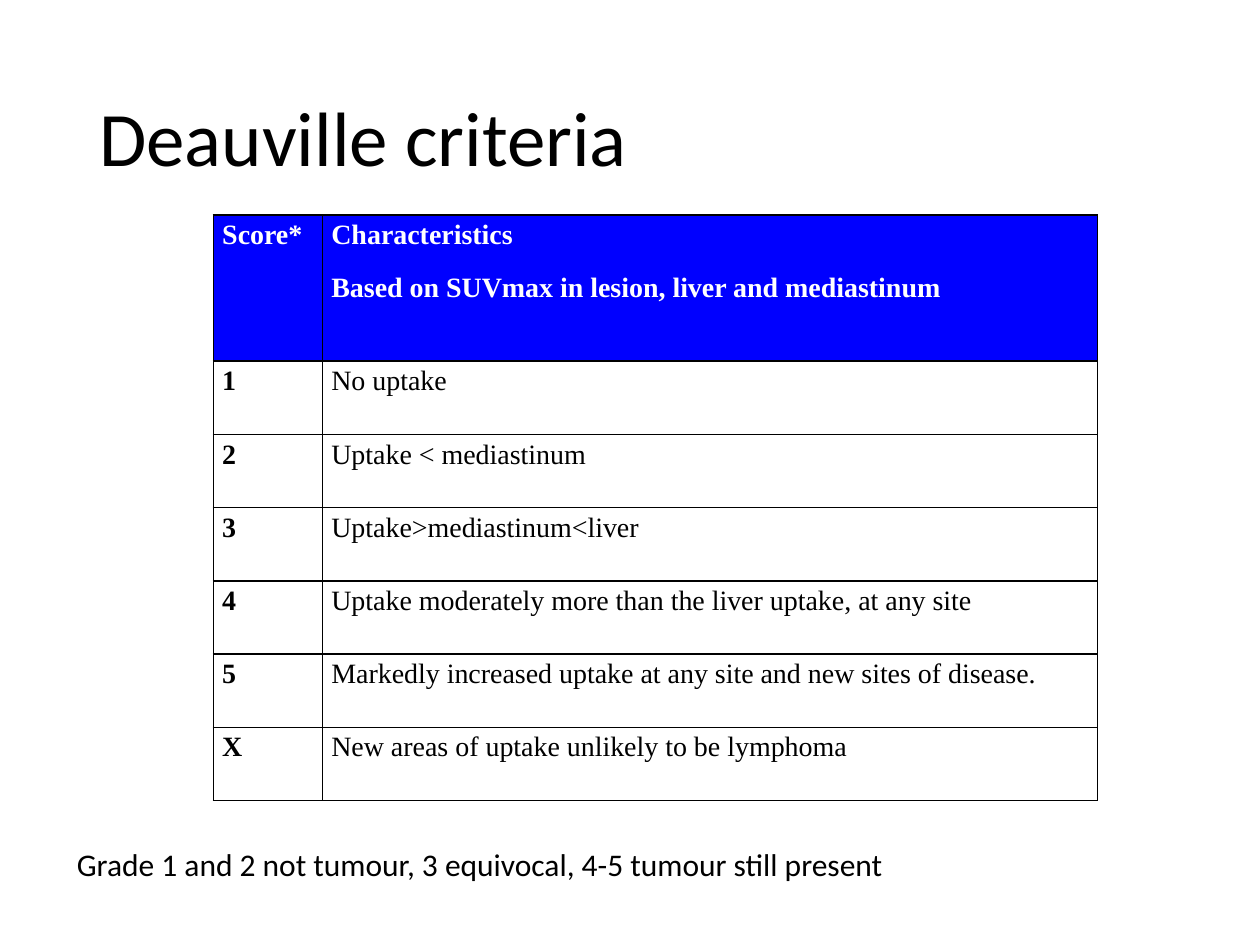
from dataclasses import dataclass

from lxml import etree
from pptx import Presentation
from pptx.dml.color import RGBColor
from pptx.enum.text import MSO_ANCHOR
from pptx.oxml.ns import qn
from pptx.util import Cm, Pt

MIDDLE, TOP = MSO_ANCHOR.MIDDLE, MSO_ANCHOR.TOP
BLANK_LAYOUT = 6

# Content
TITLE = "Deauville criteria"
HEADER = ("Score*", "Characteristics\nBased on SUVmax in lesion, liver and mediastinum")
SCORES = [
    ("1", "No uptake"),
    ("2", "Uptake < mediastinum"),
    ("3", "Uptake>mediastinum<liver"),
    ("4", "Uptake moderately more than the liver uptake, at any site"),
    ("5", "Markedly increased uptake at any site and new sites of disease."),
    ("X", "New areas of uptake unlikely to be lymphoma"),
]
FOOTNOTE = "Grade 1 and 2 not tumour, 3 equivocal, 4-5 tumour still present"


@dataclass(frozen=True)
class Theme:
    heading_font: str = "Calibri"
    table_font: str = "Times New Roman"
    black: str = "000000"
    white: str = "FFFFFF"
    header_fill: str = "0000FF"
    title_size: int = 44
    table_size: int = 16
    footnote_size: int = 18
    border_width: int = 1


THEME = Theme()

# Layout in centimetres: left, top, width, height
TITLE_BOX = (1.75, 1.02, 21.9, 3.68)
FOOTNOTE_BOX = (1.3, 16.92, 20.8, 1.02)
TABLE_LEFT, TABLE_TOP = 4.3, 4.33
COLUMN_WIDTHS = (2.2, 15.62)
ROW_HEIGHT = 1.476
CELL_MARGIN = 0.18


def format_text(text_frame, font, size, color, bold=False, spacing=None, after=None):
    for paragraph in text_frame.paragraphs:
        paragraph.line_spacing = spacing
        paragraph.space_after = after
        for run in paragraph.runs:
            run.font.name = font
            run.font.size = Pt(size)
            run.font.bold = bold
            run.font.color.rgb = RGBColor.from_string(color)


def add_text(slide, text, box, size, anchor=TOP, spacing=None):
    text_frame = slide.shapes.add_textbox(*map(Cm, box)).text_frame
    text_frame.word_wrap = True
    text_frame.vertical_anchor = anchor
    text_frame.text = text
    format_text(text_frame, THEME.heading_font, size, THEME.black, spacing=spacing)


def add_borders(cell):
    properties = cell._tc.get_or_add_tcPr()
    for index, side in enumerate(("a:lnL", "a:lnR", "a:lnT", "a:lnB")):
        line = etree.Element(qn(side), w=str(Pt(THEME.border_width)))
        fill = etree.SubElement(line, qn("a:solidFill"))
        etree.SubElement(fill, qn("a:srgbClr"), val=THEME.black)
        properties.insert(index, line)


def fill_cell(cell, text, is_header, is_score):
    cell.margin_left = cell.margin_right = Cm(CELL_MARGIN)
    cell.margin_top = cell.margin_bottom = 0
    cell.vertical_anchor = TOP
    cell.text_frame.text = text
    format_text(
        cell.text_frame, THEME.table_font, THEME.table_size,
        THEME.white if is_header else THEME.black,
        bold=is_header or is_score, spacing=1.15, after=Pt(10),
    )
    if is_header:
        cell.fill.solid()
        cell.fill.fore_color.rgb = RGBColor.from_string(THEME.header_fill)
    else:
        cell.fill.background()
    add_borders(cell)


def add_score_table(slide):
    rows = [HEADER, *SCORES]
    # The header holds two lines, so it is two rows high
    heights = [2 * ROW_HEIGHT] + [ROW_HEIGHT] * len(SCORES)
    table = slide.shapes.add_table(
        len(rows), len(COLUMN_WIDTHS), Cm(TABLE_LEFT), Cm(TABLE_TOP),
        Cm(sum(COLUMN_WIDTHS)), Cm(sum(heights)),
    ).table
    table.horz_banding = False
    for column, width in zip(table.columns, COLUMN_WIDTHS):
        column.width = Cm(width)
    for row_index, (texts, height) in enumerate(zip(rows, heights)):
        table.rows[row_index].height = Cm(height)
        for column_index, text in enumerate(texts):
            fill_cell(table.cell(row_index, column_index), text,
                      is_header=row_index == 0, is_score=column_index == 0)


def main():
    presentation = Presentation()
    presentation.slide_width, presentation.slide_height = Cm(25.4), Cm(19.05)
    slide = presentation.slides.add_slide(presentation.slide_layouts[BLANK_LAYOUT])

    # Title, table of scores, footnote
    add_text(slide, TITLE, TITLE_BOX, THEME.title_size, anchor=MIDDLE, spacing=0.9)
    add_score_table(slide)
    add_text(slide, FOOTNOTE, FOOTNOTE_BOX, THEME.footnote_size)

    presentation.save("out.pptx")


if __name__ == "__main__":
    main()
